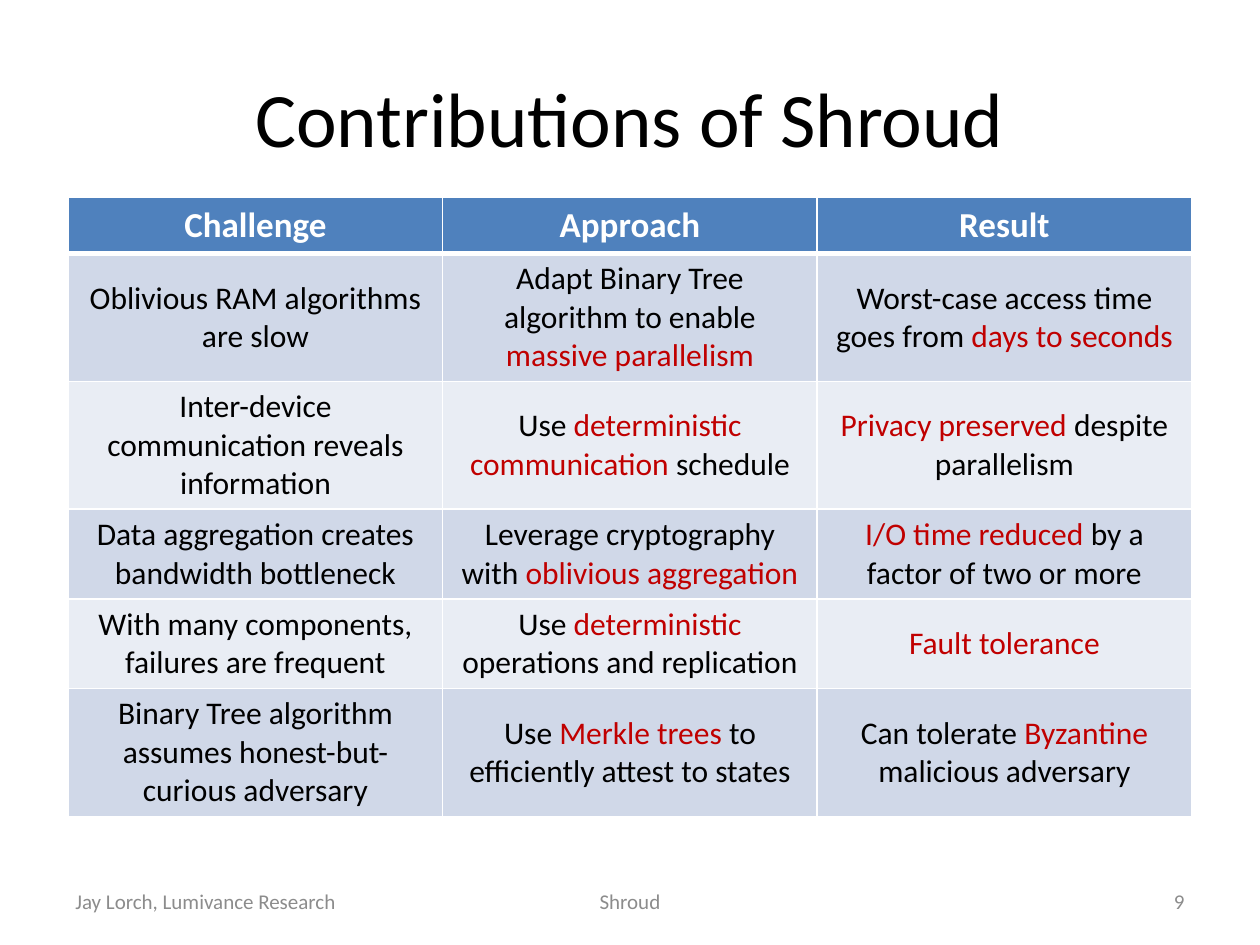
"""Build the slide that tabulates the contributions of Shroud."""
from dataclasses import dataclass

from lxml.etree import SubElement
from pptx import Presentation
from pptx.dml.color import RGBColor
from pptx.enum.text import MSO_ANCHOR, PP_ALIGN
from pptx.oxml.ns import qn
from pptx.slide import Slide
from pptx.table import _Cell
from pptx.text.text import _Paragraph
from pptx.util import Pt

BLACK, WHITE, GREY, RED = "000000", "FFFFFF", "8C8C8C", "C00000"
HEADER_FILL, BAND_FILLS = "4F81BD", ("D0D8E8", "E9EDF4")
HEADINGS = ("Challenge", "Approach", "Result")
CONTRIBUTIONS = (
    ("Oblivious RAM algorithms are slow",
     "Adapt Binary Tree algorithm to enable |massive parallelism",
     "Worst-case access time goes from |days to seconds"),
    ("Inter-device communication reveals information",
     "Use |deterministic communication |schedule",
     "|Privacy preserved| despite parallelism"),
    ("Data aggregation creates bandwidth bottleneck",
     "Leverage cryptography with |oblivious aggregation",
     "|I/O time reduced |by a factor of two or more"),
    ("With many components, failures are frequent",
     "Use |deterministic| operations and replication",
     "|Fault tolerance"),
    ("Binary Tree algorithm assumes honest-but-curious adversary",
     "Use |Merkle trees| to efficiently attest to states",
     "Can tolerate |Byzantine |malicious adversary"),
)
ROW_HEIGHTS = (32, 73, 73, 51.3, 51.3, 73)
COLUMN_WIDTH = 214
TABLE_LEFT, TABLE_TOP = 39, 113


@dataclass(frozen=True)
class TextStyle:
    size: float
    color: str
    align: PP_ALIGN = PP_ALIGN.CENTER
    bold: bool = False


@dataclass(frozen=True)
class Label:
    text: str
    left: float
    top: float
    width: float
    height: float
    style: TextStyle


LABELS = (
    Label("Contributions of Shroud", 36, 21.6, 648, 90, TextStyle(44, BLACK)),
    Label("Shroud", 246, 500.4, 228, 28.8, TextStyle(12, GREY)),
    Label("Jay Lorch, Lumivance Research", 36, 500.4, 168, 28.8,
          TextStyle(12, GREY, PP_ALIGN.LEFT)),
    Label("9", 516, 500.4, 168, 28.8, TextStyle(12, GREY, PP_ALIGN.RIGHT)),
)
HEADING_STYLE = TextStyle(20, WHITE, bold=True)
BODY_STYLE = TextStyle(18, BLACK)


def rgb(color: str) -> RGBColor:
    """Turn a hex string into a colour."""
    return RGBColor.from_string(color)


def write(paragraph: _Paragraph, text: str, style: TextStyle) -> None:
    """Write text in which every second part between bars is highlighted."""
    paragraph.alignment = style.align
    font_format = {"name": "Calibri", "size": Pt(style.size), "bold": style.bold}
    for index, part in enumerate(text.split("|")):
        if not part:
            continue
        run = paragraph.add_run()
        run.text = part
        for attribute, value in font_format.items():
            setattr(run.font, attribute, value)
        run.font.color.rgb = rgb(RED if index % 2 else style.color)


def add_label(slide: Slide, label: Label) -> None:
    """Add a text box with one vertically centred line."""
    box = slide.shapes.add_textbox(
        Pt(label.left), Pt(label.top), Pt(label.width), Pt(label.height))
    frame = box.text_frame
    frame_format = {"word_wrap": True, "vertical_anchor": MSO_ANCHOR.MIDDLE}
    for attribute, value in frame_format.items():
        setattr(frame, attribute, value)
    write(frame.paragraphs[0], label.text, label.style)


def add_borders(cell: _Cell, top: float, bottom: float) -> None:
    """Draw white borders round a cell."""
    properties = cell._tc.get_or_add_tcPr()
    for side, width in {"L": 1, "R": 1, "T": top, "B": bottom}.items():
        line = SubElement(properties, qn(f"a:ln{side}"), w=str(Pt(width)))
        solid = SubElement(line, qn("a:solidFill"))
        SubElement(solid, qn("a:srgbClr"), val=WHITE)


def fill_cell(cell: _Cell, text: str, row: int) -> None:
    """Fill one cell according to its row."""
    heading = row == 0
    add_borders(cell, top=3 if row == 1 else 1, bottom=3 if heading else 1)
    cell.fill.solid()
    cell.fill.fore_color.rgb = rgb(
        HEADER_FILL if heading else BAND_FILLS[(row - 1) % 2])
    cell.vertical_anchor = MSO_ANCHOR.MIDDLE
    write(cell.text_frame.paragraphs[0], text,
          HEADING_STYLE if heading else BODY_STYLE)


def add_contributions(slide: Slide) -> None:
    """Add the table of challenges, approaches and results."""
    rows = (HEADINGS, *CONTRIBUTIONS)
    table = slide.shapes.add_table(
        len(rows), len(HEADINGS), Pt(TABLE_LEFT), Pt(TABLE_TOP),
        Pt(COLUMN_WIDTH * len(HEADINGS)), Pt(sum(ROW_HEIGHTS))).table
    for column in table.columns:
        column.width = Pt(COLUMN_WIDTH)
    for row, (texts, height) in enumerate(zip(rows, ROW_HEIGHTS)):
        table.rows[row].height = Pt(height)
        for column, text in enumerate(texts):
            fill_cell(table.cell(row, column), text, row)


def main() -> None:
    """Build and save the presentation."""
    presentation = Presentation()
    presentation.slide_width, presentation.slide_height = Pt(720), Pt(540)
    slide = presentation.slides.add_slide(presentation.slide_layouts[6])
    for label in LABELS:
        add_label(slide, label)
    add_contributions(slide)
    presentation.save("out.pptx")


if __name__ == "__main__":
    main()
